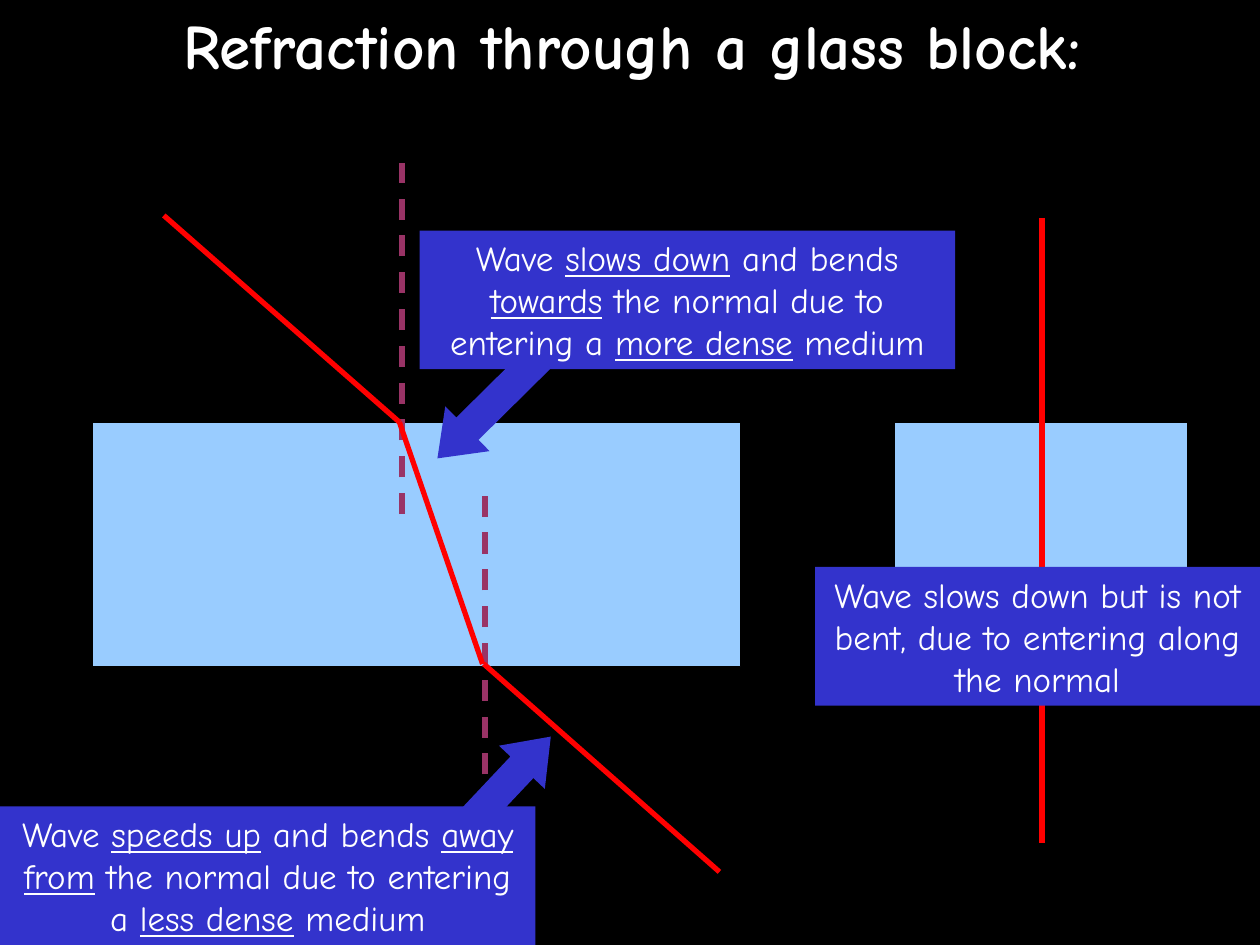
from pptx import Presentation
from pptx.dml.color import RGBColor
from pptx.enum.dml import MSO_LINE
from pptx.enum.shapes import MSO_CONNECTOR, MSO_SHAPE
from pptx.enum.text import MSO_ANCHOR, MSO_AUTO_SIZE, PP_ALIGN
from pptx.oxml.ns import qn
from pptx.util import Inches, Pt
from lxml import etree

BLACK = RGBColor(0x00, 0x00, 0x00)
WHITE = RGBColor(0xFF, 0xFF, 0xFF)
GLASS = RGBColor(0x99, 0xCC, 0xFF)
RAY = RGBColor(0xFF, 0x00, 0x00)
NORMAL = RGBColor(0x99, 0x33, 0x66)
CALLOUT = RGBColor(0x33, 0x33, 0xCC)

FONT = "Comic Neue"
RECTANGLE = MSO_SHAPE.RECTANGLE
LEFT_ARROW = MSO_SHAPE.LEFT_ARROW
STRAIGHT = MSO_CONNECTOR.STRAIGHT
DASH = MSO_LINE.DASH
CENTER = PP_ALIGN.CENTER
TOP = MSO_ANCHOR.TOP
FIT_SHAPE = MSO_AUTO_SIZE.SHAPE_TO_FIT_TEXT

BLOCK_TOP = 3.35
BLOCK_HEIGHT = 1.94
CALLOUT_HEIGHT = 1.1
NORMAL_LENGTH = 2.79


def write_text(shape, runs, size, bold=False):
    frame = shape.text_frame
    frame.word_wrap = True
    frame.auto_size = FIT_SHAPE
    frame.vertical_anchor = TOP
    paragraph = frame.paragraphs[0]
    paragraph.alignment = CENTER
    for text, underlined in runs:
        run = paragraph.add_run()
        run.text = text
        font = run.font
        font.name = FONT
        font.size = Pt(size)
        font.bold = bold
        font.underline = underlined
        font.color.rgb = WHITE


def add_title(slide, text):
    title = slide.shapes.title
    title.left, title.top = Inches(0.67), Inches(0)
    title.width, title.height = Inches(8.69), Inches(0.7)
    write_text(title, [(text, False)], 36, bold=True)


def add_filled_shape(shapes, kind, left, top, width, height, color):
    shape = shapes.add_shape(
        kind, Inches(left), Inches(top), Inches(width), Inches(height)
    )
    shape.shadow.inherit = False
    shape.fill.solid()
    shape.fill.fore_color.rgb = color
    shape.line.fill.background()
    return shape


def add_glass_block(slide, left, width):
    block = add_filled_shape(
        slide.shapes, RECTANGLE, left, BLOCK_TOP, width, BLOCK_HEIGHT, GLASS
    )
    block.line.color.rgb = BLACK
    block.line.width = Pt(0.75)


def add_line(slide, start, end, color):
    connector = slide.shapes.add_connector(
        STRAIGHT, *[Inches(value) for value in (*start, *end)]
    )
    connector.line.color.rgb = color
    connector.line.width = Pt(3)
    etree.SubElement(connector._element.spPr, qn("a:effectLst"))
    return connector


def add_normal(slide, x, bottom):
    normal = add_line(slide, (x, bottom), (x, bottom - NORMAL_LENGTH), NORMAL)
    normal.line.dash_style = DASH


def add_callout(shapes, left, top, width, runs):
    box = add_filled_shape(
        shapes, RECTANGLE, left, top, width, CALLOUT_HEIGHT, CALLOUT
    )
    write_text(box, runs, 20)


def add_pointing_callout(slide, left, top, runs, arrow_left, arrow_top, rotation):
    group = slide.shapes.add_group_shape()
    arrow = add_filled_shape(
        group.shapes, LEFT_ARROW, arrow_left, arrow_top, 1.33, 0.5, CALLOUT
    )
    arrow.adjustments[0] = 0.5
    arrow.adjustments[1] = 0.67
    arrow.rotation = rotation
    add_callout(group.shapes, left, top, 4.25, runs)


def bending_runs(speed, direction, density):
    return [
        ("Wave ", False),
        (speed, True),
        (" and bends ", False),
        (direction, True),
        (" the normal due to entering a ", False),
        (density, True),
        (" medium", False),
    ]


def main():
    presentation = Presentation()
    presentation.slide_width = Inches(10)
    presentation.slide_height = Inches(7.5)
    slide = presentation.slides.add_slide(presentation.slide_layouts[5])
    slide.background.fill.solid()
    slide.background.fill.fore_color.rgb = BLACK

    add_title(slide, "Refraction through a glass block:")

    add_glass_block(slide, 0.73, 5.15)
    add_normal(slide, 3.19, 4.08)
    add_line(slide, (1.3, 1.71), (3.17, BLOCK_TOP), RAY)
    add_normal(slide, 3.85, 6.73)
    add_line(slide, (3.17, BLOCK_TOP), (3.83, 5.27), RAY)
    add_line(slide, (3.84, 5.27), (5.71, 6.92), RAY)

    add_glass_block(slide, 7.1, 2.33)
    add_line(slide, (8.27, 1.73), (8.27, 6.69), RAY)

    entering = bending_runs("slows down", "towards", "more dense")
    add_pointing_callout(slide, 3.33, 1.83, entering, 3.28, 2.92, 315.3)
    leaving = bending_runs("speeds up", "away from", "less dense")
    add_pointing_callout(slide, 0, 6.4, leaving, 3.25, 6.08, 133.3)
    straight = "Wave slows down but is not bent, due to entering along the normal"
    add_callout(slide.shapes, 6.47, 4.5, 3.53, [(straight, False)])

    presentation.save("out.pptx")


if __name__ == "__main__":
    main()
